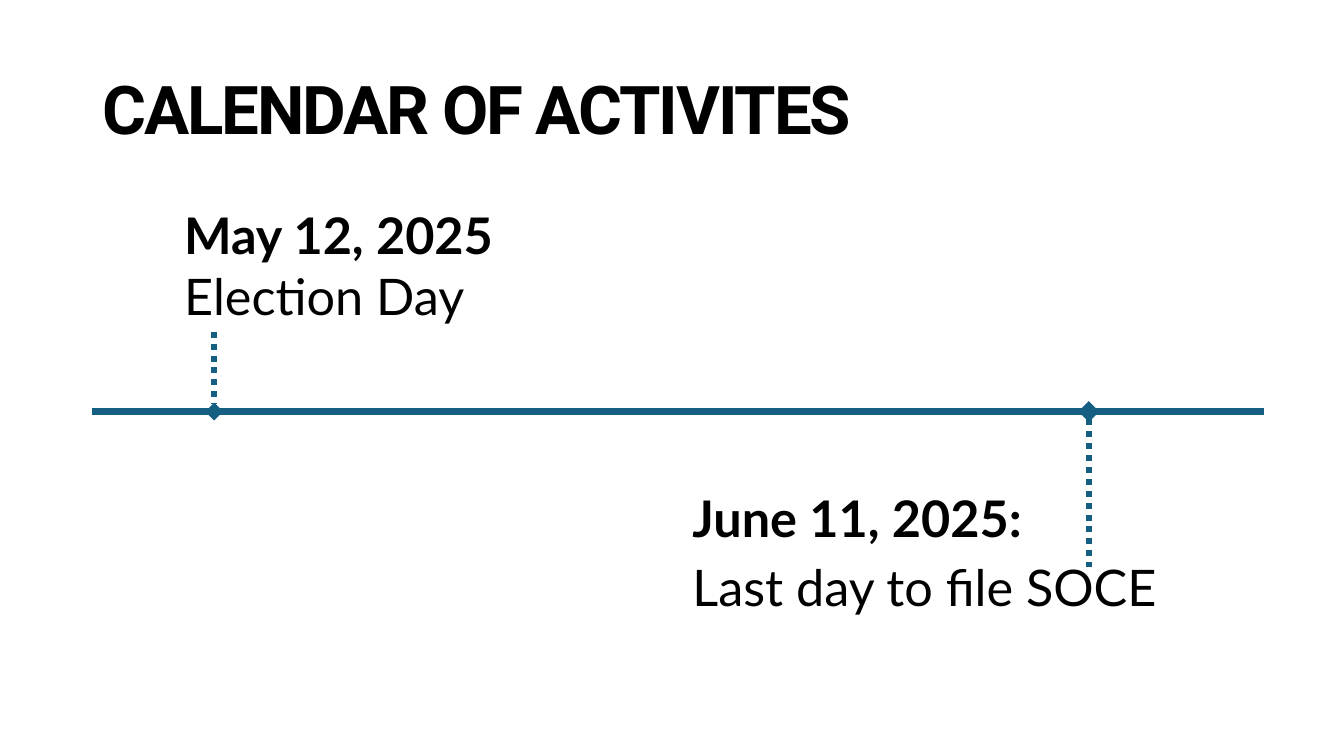
"""Build the calendar of activities timeline slide."""
from dataclasses import dataclass

import lxml.etree
import pptx
import pptx.dml.color
import pptx.enum.shapes
import pptx.enum.text
import pptx.oxml.ns
import pptx.shapes.connector
import pptx.slide
import pptx.text.text
import pptx.util

EMU_PER_PX = 9525
BLACK = pptx.dml.color.RGBColor(0x00, 0x00, 0x00)
TEAL = pptx.dml.color.RGBColor(0x15, 0x60, 0x82)
AXIS_LEFT, AXIS_RIGHT, AXIS_Y = 88, 1204, 392
MAY_X, JUNE_X = 204, 1037


@dataclass(frozen=True)
class Event:
    """A dated entry; one paragraph with a line break, or two spaced paragraphs."""
    date: str
    detail: str
    box: tuple[int, int, int, int]
    one_paragraph: bool


@dataclass(frozen=True)
class TimelineLine:
    """A straight line with optional dots and diamond ends."""
    start: tuple[int, int]
    end: tuple[int, int]
    width: float
    dotted: bool = False
    diamond: str = ""


EVENTS = (
    Event("May 12, 2025", "Election Day", (166, 190, 948, 126), True),
    Event("June 11, 2025:", "Last day to file SOCE", (650, 466, 482, 140), False),
)
LINES = (
    TimelineLine((AXIS_LEFT, AXIS_Y), (JUNE_X, AXIS_Y), 5, diamond="tailEnd"),
    TimelineLine((MAY_X, 316), (MAY_X, AXIS_Y), 4.25, True, "tailEnd"),
    TimelineLine((JUNE_X, AXIS_Y), (JUNE_X, 540), 4.25, True, "headEnd"),
    TimelineLine((AXIS_LEFT, AXIS_Y), (AXIS_RIGHT, AXIS_Y), 5),
)


def px(length: int) -> pptx.util.Emu:
    """Turn pixels into EMU."""
    return pptx.util.Emu(length * EMU_PER_PX)


def write_text(paragraph: pptx.text.text._Paragraph, text: str, *, size: int = 36,
               font: str = "Lato", bold: bool = False, spacing: int = 0) -> None:
    """Add a formatted run; spacing is in hundredths of a point."""
    run = paragraph.add_run()
    run.text = text
    run.font.size = pptx.util.Pt(size)
    run.font.name = font
    run.font.bold = bold
    run.font.color.rgb = BLACK
    if spacing:
        run.font._element.set("spc", str(spacing))


def add_title(slide: pptx.slide.Slide, text: str) -> None:
    """Place and format the title placeholder."""
    title = slide.shapes.title
    title.left, title.top, title.width, title.height = map(px, (88, 38, 1104, 139))
    frame = title.text_frame
    frame.auto_size = pptx.enum.text.MSO_AUTO_SIZE.NONE
    frame.vertical_anchor = pptx.enum.text.MSO_ANCHOR.MIDDLE
    paragraph = frame.paragraphs[0]
    paragraph.alignment = pptx.enum.text.PP_ALIGN.LEFT
    paragraph.line_spacing = 0.9
    write_text(paragraph, text, size=48, font="Roboto", bold=True, spacing=-150)


def add_event(slide: pptx.slide.Slide, event: Event) -> None:
    """Add the date and detail of an event."""
    frame = slide.shapes.add_textbox(*map(px, event.box)).text_frame
    frame.word_wrap = True
    paragraph = frame.paragraphs[0]
    write_text(paragraph, event.date, bold=True)
    if event.one_paragraph:
        frame.auto_size = pptx.enum.text.MSO_AUTO_SIZE.SHAPE_TO_FIT_TEXT
        paragraph.add_line_break()
    else:
        paragraph.line_spacing = 0.9
        paragraph = frame.add_paragraph()
        paragraph.line_spacing = 0.9
        paragraph.space_before = pptx.util.Pt(10)
    write_text(paragraph, event.detail)


def add_line(slide: pptx.slide.Slide, line: TimelineLine) -> None:
    """Draw a timeline line."""
    connector: pptx.shapes.connector.Connector = slide.shapes.add_connector(
        pptx.enum.shapes.MSO_CONNECTOR.STRAIGHT, *map(px, line.start + line.end))
    connector.line.color.rgb = TEAL
    connector.line.width = pptx.util.Pt(line.width)
    properties = connector._element.spPr
    outline = properties.find(pptx.oxml.ns.qn("a:ln"))
    if line.dotted:
        lxml.etree.SubElement(outline, pptx.oxml.ns.qn("a:prstDash"), val="sysDot")
    if line.diamond:
        lxml.etree.SubElement(outline, pptx.oxml.ns.qn(f"a:{line.diamond}"), type="diamond")
    lxml.etree.SubElement(properties, pptx.oxml.ns.qn("a:effectLst"))


def main() -> None:
    """Build and save the presentation."""
    presentation = pptx.Presentation()
    presentation.slide_width, presentation.slide_height = px(1280), px(720)
    slide = presentation.slides.add_slide(presentation.slide_layouts[5])
    add_title(slide, "CALENDAR OF ACTIVITES")
    for event in EVENTS:
        add_event(slide, event)
    for line in LINES:
        add_line(slide, line)
    presentation.save("out.pptx")


if __name__ == "__main__":
    main()
